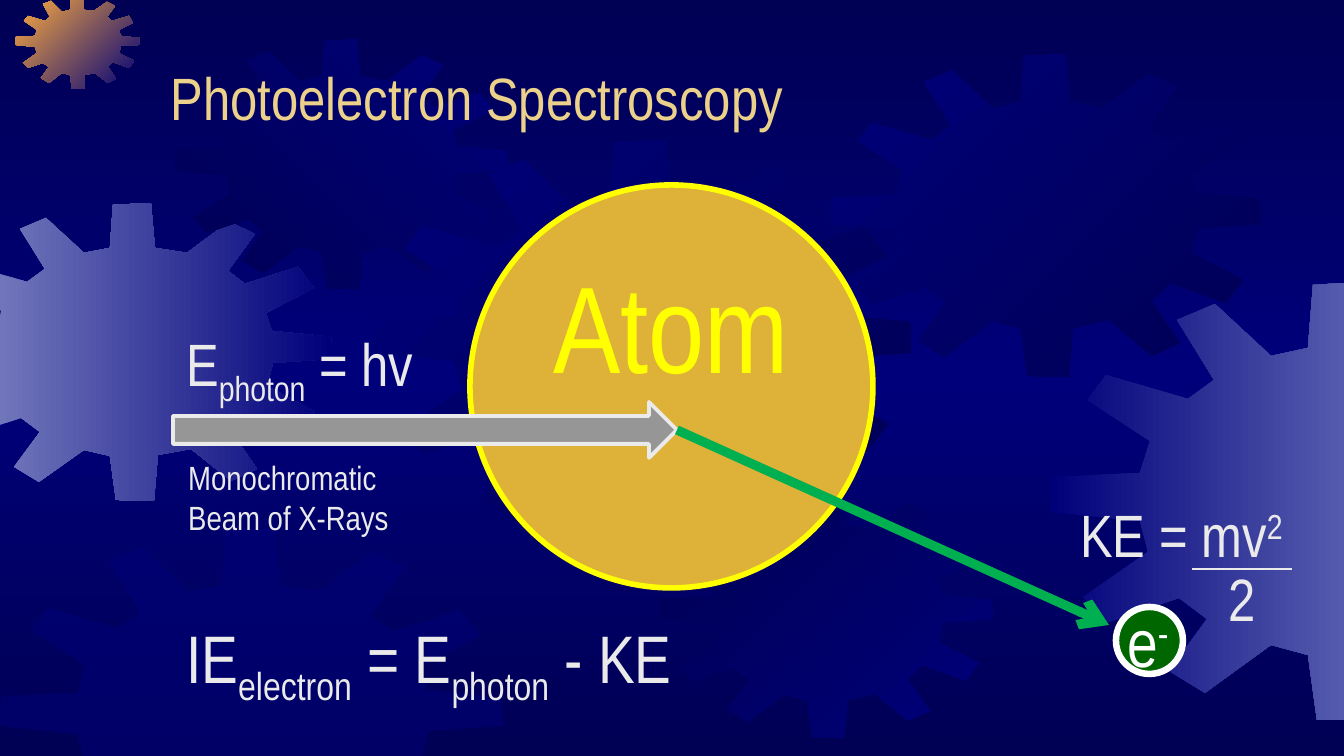
import pptx
import pptx.util
import pptx.dml.color
import pptx.enum.dml
import pptx.enum.shapes
import pptx.enum.text
import pptx.oxml
import pptx.oxml.ns
import copy

RGB = pptx.dml.color.RGBColor
NAVY = RGB(0x00, 0x00, 0x54)
BLUE = RGB(0x00, 0x00, 0x7A)
LILAC = RGB(0x71, 0x76, 0xBB)
MAUVE = RGB(0x55, 0x5B, 0xAD)
ORANGE = RGB(0xFC, 0xAB, 0x40)
SAND = RGB(0xEB, 0xD1, 0x89)
GOLD = RGB(0xDE, 0xB2, 0x39)
YELLOW = RGB(0xFF, 0xFF, 0x00)
GREY = RGB(0x96, 0x96, 0x96)
PALE = RGB(0xEA, 0xEA, 0xEA)
GREEN = RGB(0x00, 0xB0, 0x50)
DARK = RGB(0x00, 0x66, 0x00)
WHITE = RGB(0xFF, 0xFF, 0xFF)
FONT = "Arial Narrow"
PX = 914400 / 134.4
WIDE, HIGH = 1344, 756
SUB, SUP = -25000, 30000

SHAPE = pptx.enum.shapes.MSO_SHAPE
ANCHOR = pptx.enum.text.MSO_ANCHOR
ALIGN = pptx.enum.text.PP_ALIGN
SIZING = pptx.enum.text.MSO_AUTO_SIZE
qn = pptx.oxml.ns.qn

COG_W, COG_H = 401, 301
COG = [
    (255, 50), (223, 45), (219, 0), (180, 2), (177, 45), (151, 51), (113, 15),
    (87, 26), (112, 67), (94, 80), (38, 64), (25, 81), (68, 109), (61, 131),
    (1, 134), (0, 158), (61, 164), (67, 185), (22, 216), (38, 234), (88, 217),
    (107, 231), (81, 267), (106, 282), (151, 249), (177, 256), (183, 300),
    (222, 301), (226, 255), (259, 248), (299, 281), (325, 269), (299, 230),
    (316, 213), (368, 232), (384, 211), (336, 185), (342, 162), (401, 158),
    (400, 135), (341, 129), (335, 111), (383, 86), (367, 65), (313, 82),
    (296, 69), (323, 31), (297, 19),
]
GEARS = [
    ((-66, 203, 398, 298), LILAC, BLUE, 0),
    ((16, -4, 123, 93), ORANGE, BLUE, 45),
    ((175, 39, 333, 250), NAVY, BLUE, 315),
    ((372, 140, 539, 405), BLUE, NAVY, 45),
    ((0, 528, 503, 378), BLUE, None, 0),
    ((660, 488, 333, 250), NAVY, BLUE, 45),
    ((831, 54, 430, 323), BLUE, NAVY, 45),
    ((1051, 282, 583, 439), BLUE, MAUVE, 0),
]


def emu(*nums):
    return [pptx.util.Emu(round(n * PX)) for n in nums]


def blend(fill, first, last, turn):
    fill.gradient()
    fill.gradient_angle = (360 - turn) % 360
    for stop, color in zip(fill.gradient_stops, (first, last)):
        stop.color.rgb = color


def backdrop(slide):
    blend(slide.background.fill, NAVY, NAVY, 90)
    stops = slide.element.find(".//" + qn("a:gsLst"))
    stops.insert(1, copy.deepcopy(stops[0]))
    mid = slide.background.fill.gradient_stops[1]
    mid.position = 0.5
    mid.color.rgb = BLUE


def clip(dots, axis, edge, sign):
    kept = []
    for a, b in zip(dots[-1:] + dots[:-1], dots):
        was, now = [(d[axis] - edge) * sign >= 0 for d in (a, b)]
        if was != now:
            part = (edge - a[axis]) / (b[axis] - a[axis])
            kept.append(tuple(u + part * (v - u) for u, v in zip(a, b)))
        if now:
            kept.append(b)
    return kept


def gear(slide, box, first, last, turn):
    x, y, w, h = box
    dots = [(x + u * w / COG_W, y + v * h / COG_H) for u, v in COG]
    for axis, edge, sign in ((0, 0, 1), (1, 0, 1), (0, WIDE, -1), (1, HIGH, -1)):
        dots = clip(dots, axis, edge, sign)
    pen = slide.shapes.build_freeform(*dots[0], scale=PX)
    pen.add_line_segments(dots[1:], close=True)
    cog = pen.convert_to_shape()
    cog.shadow.inherit = False
    cog.line.fill.background()
    if last is not None:
        blend(cog.fill, first, last, turn)
        return
    cog.fill.solid()
    cog.fill.fore_color.rgb = first
    tint = cog.element.spPr.find(".//" + qn("a:srgbClr"))
    pptx.oxml.ns.qn
    alpha = tint.makeelement(qn("a:alpha"), {"val": "50000"})
    tint.append(alpha)


def style(para, size, color):
    para.font.name = FONT
    para.font.size = pptx.util.Pt(size)
    para.font.color.rgb = color


def label(slide, box, size, color, *lines):
    frame = slide.shapes.add_textbox(*emu(*box)).text_frame
    frame.word_wrap = False
    frame.auto_size = SIZING.SHAPE_TO_FIT_TEXT
    for i, line in enumerate(lines):
        para = frame.add_paragraph() if i else frame.paragraphs[0]
        style(para, size, color)
        for text, base in line:
            run = para.add_run()
            run.text = text
            if base:
                run._r.get_or_add_rPr().set("baseline", str(base))


def solid(slide, kind, box, fill, edge, width):
    shape = slide.shapes.add_shape(kind, *emu(*box))
    shape.shadow.inherit = False
    shape.fill.solid()
    shape.fill.fore_color.rgb = fill
    shape.line.color.rgb = edge
    shape.line.width = pptx.util.Pt(width)
    return shape


def stroke(slide, ends, color, width, head=False):
    kind = pptx.enum.shapes.MSO_CONNECTOR.STRAIGHT
    line = slide.shapes.add_connector(kind, *emu(*ends))
    line.line.color.rgb = color
    line.line.width = pptx.util.Pt(width)
    props = line.element.spPr
    props.append(props.makeelement(qn("a:effectLst"), {}))
    if head:
        ln = props.find(qn("a:ln"))
        ln.append(ln.makeelement(qn("a:tailEnd"), {"type": "arrow"}))


def heading(slide, box):
    title = slide.shapes.title
    title.element.getparent().append(title.element)
    title.left, title.top, title.width, title.height = emu(*box)
    frame = title.text_frame
    frame.text = "Photoelectron Spectroscopy"
    frame.vertical_anchor = ANCHOR.MIDDLE
    frame.paragraphs[0].alignment = ALIGN.LEFT
    style(frame.paragraphs[0], 32, SAND)


def atom(slide, box):
    frame = solid(slide, SHAPE.OVAL, box, GOLD, YELLOW, 3).text_frame
    frame.text = "Atom"
    frame.vertical_anchor = ANCHOR.TOP
    frame.paragraphs[0].alignment = ALIGN.CENTER
    style(frame.paragraphs[0], 66, YELLOW)


def beam(slide, box):
    x, y, w, h = box
    solid(slide, SHAPE.RIGHT_ARROW, (x, y + 82, w, 56), GREY, PALE, 2)
    label(slide, (x, y, 270, 86), 32, PALE,
          [("E", 0), ("photon", SUB), (" = hv", 0)])
    label(slide, (x + 2, y + 130, 238, 136), 18, PALE,
          [("Monochromatic", 0)], [("Beam of X-Rays", 0)])


def electron(slide, box):
    x, y, w, h = box
    stroke(slide, (x, y, x + w, y + h), GREEN, 5, True)
    solid(slide, SHAPE.OVAL, (x + w + 7, y + h - 18, 67, 67), DARK, WHITE, 3.5)
    label(slide, (x + w + 5, y + h - 31, 70, 95), 36, WHITE,
          [("e", 0), ("-", SUP)])


def kinetic(slide, box):
    x, y, w, h = box
    label(slide, (x, y, w, 86), 32, PALE, [("KE = mv", 0), ("2", SUP)])
    stroke(slide, (x + 125, y + 78, x + 225, y + 78), PALE, 0.75)
    label(slide, (x + 148, y + h - 86, 55, 86), 32, PALE, [("2", 0)])


def energy(slide, box):
    label(slide, box, 36, PALE,
          [("IE", 0), ("electron", SUB), (" = E", 0), ("photon", SUB), (" - KE", 0)])


def main():
    deck = pptx.Presentation()
    deck.slide_width, deck.slide_height = emu(WIDE, HIGH)
    slide = deck.slides.add_slide(deck.slide_layouts[5])
    backdrop(slide)
    for item in GEARS:
        gear(slide, *item)
    heading(slide, (157, 34, 1142, 126))
    atom(slide, (470, 185, 403, 403))
    beam(slide, (173, 320, 504, 266))
    electron(slide, (677, 430, 432, 195))
    kinetic(slide, (1067, 491, 234, 150))
    energy(slide, (173, 610, 581, 95))
    deck.save("out.pptx")


if __name__ == "__main__":
    main()
